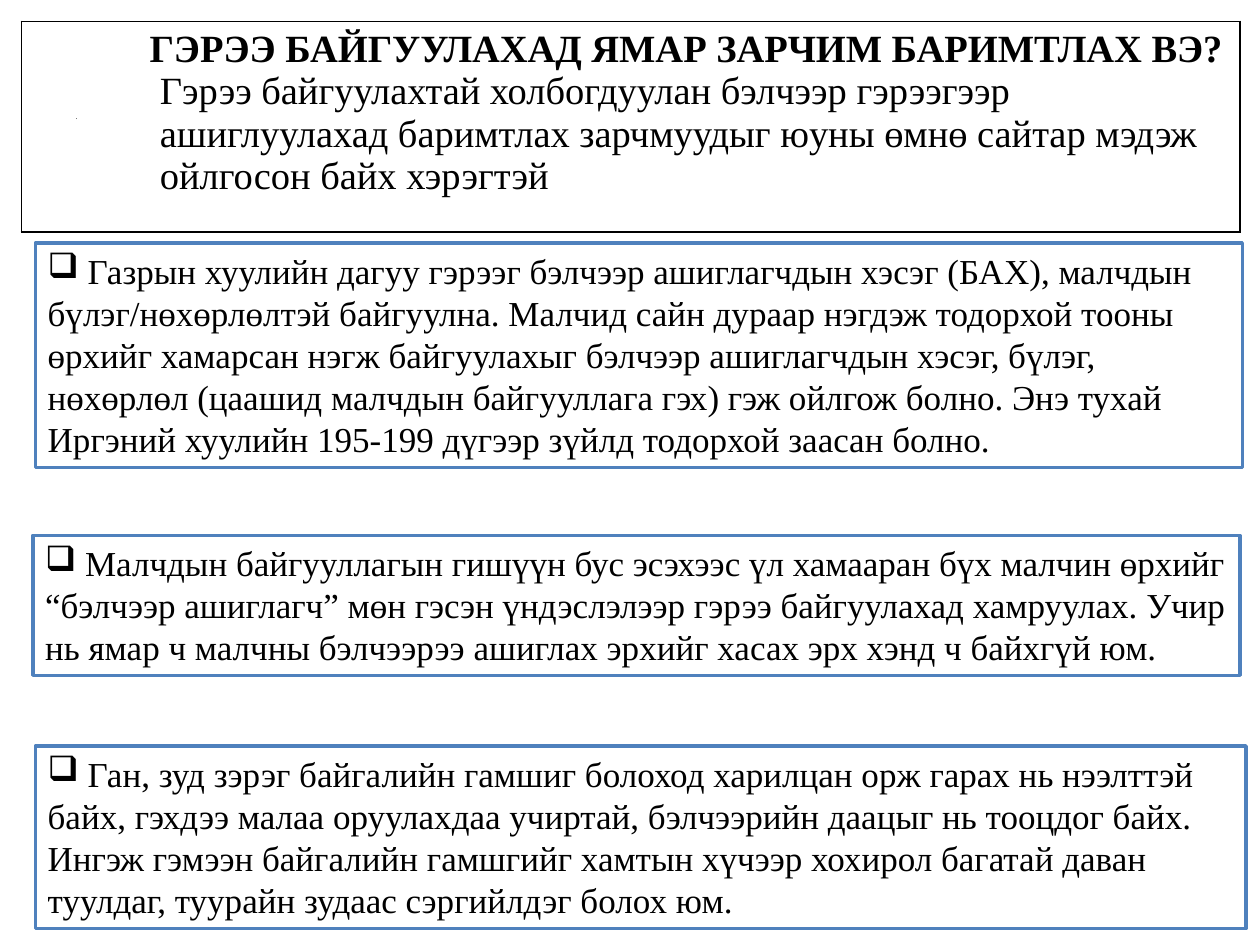
from lxml.etree import SubElement
from pptx import Presentation
from pptx.dml.color import RGBColor
from pptx.enum.shapes import MSO_SHAPE
from pptx.enum.text import MSO_ANCHOR, MSO_AUTO_SIZE, PP_ALIGN
from pptx.oxml import parse_xml
from pptx.oxml.ns import nsdecls, qn
from pptx.util import Inches, Pt

COLORS = {"text": "000000", "paper": "FFFFFF", "frame": "4F81BD"}
SERIF = "Times New Roman"


def style_run(run, size, font=SERIF, bold=False):
    run.font.size = Pt(size)
    run.font.name = font
    run.font.bold = bold
    run.font.color.rgb = RGBColor.from_string(COLORS["text"])


def set_borders(cell, visible_sides):
    for position, side in enumerate("LRTB"):
        fill = "<a:noFill/>"
        if side in visible_sides:
            fill = f'<a:solidFill><a:srgbClr val="{COLORS["text"]}"/></a:solidFill>'
        border = parse_xml(f'<a:ln{side} {nsdecls("a")} w="12700">{fill}</a:ln{side}>')
        cell._tc.get_or_add_tcPr().insert(position, border)


prs = Presentation()
prs.slide_width, prs.slide_height = Inches(10), Inches(7.5)
slide = prs.slides.add_slide(prs.slide_layouts[5])

# Title placeholder, reduced to a dot behind the heading
title = slide.shapes.title
title.left, title.top = Inches(0.5), Inches(0.3)
title.width, title.height = Inches(9), Inches(1.25)
title.text_frame.text = "."
title.text_frame.vertical_anchor = MSO_ANCHOR.MIDDLE
title.text_frame.paragraphs[0].alignment = PP_ALIGN.LEFT
style_run(title.text_frame.paragraphs[0].runs[0], 4, "Calibri")

# Heading table
heading = slide.shapes.add_table(
    1, 2, Inches(0.17), Inches(0.17), Inches(9.67), Inches(1.67)).table
heading.first_row = heading.horz_banding = False
for column, width in zip(heading.columns, (0.88, 8.79)):
    column.width = Inches(width)
for column_index, sides in enumerate(("LTB", "TRB")):
    cell = heading.cell(0, column_index)
    cell.fill.background()
    set_borders(cell, sides)

principles = heading.cell(0, 1)
principles.margin_left = principles.margin_right = Inches(0.07)
principles.margin_top = principles.margin_bottom = 0
principles.text_frame.text = "\n".join([
    "ГЭРЭЭ БАЙГУУЛАХАД ЯМАР ЗАРЧИМ БАРИМТЛАХ ВЭ?",
    "Гэрээ байгуулахтай холбогдуулан бэлчээр гэрээгээр",
    "ашиглуулахад баримтлах зарчмуудыг юуны өмнө сайтар мэдэж",
    "ойлгосон байх хэрэгтэй",
])
question, *explanation = principles.text_frame.paragraphs
question.alignment = PP_ALIGN.CENTER
question.line_spacing = 1.15
style_run(question.runs[0], 22, bold=True)
for line in explanation:
    line.alignment = PP_ALIGN.LEFT
    line._p.get_or_add_pPr().set("marL", str(Inches(0.15)))
    style_run(line.runs[0], 22)

# Framed rules: left, top, width, height, wording
rules = [
    (0.28, 1.93, 9.58, 1.78,
     "Газрын хуулийн дагуу гэрээг бэлчээр ашиглагчдын хэсэг (БАХ), малчдын "
     "бүлэг/нөхөрлөлтэй байгуулна. Малчид сайн дураар нэгдэж тодорхой тооны "
     "өрхийг хамарсан нэгж байгуулахыг бэлчээр ашиглагчдын хэсэг, бүлэг, "
     "нөхөрлөл (цаашид малчдын байгууллага гэх) гэж ойлгож болно. Энэ тухай "
     "Иргэний хуулийн 195-199 дүгээр зүйлд тодорхой заасан болно."),
    (0.26, 4.25, 9.58, 1.11,
     "Малчдын байгууллагын гишүүн бус эсэхээс үл хамааран бүх малчин өрхийг "
     "“бэлчээр ашиглагч” мөн гэсэн үндэслэлээр гэрээ байгуулахад хамруулах. Учир "
     "нь ямар ч малчны бэлчээрээ ашиглах эрхийг хасах эрх хэнд ч байхгүй юм."),
    (0.28, 5.92, 9.61, 1.45,
     "Ган, зуд зэрэг байгалийн гамшиг болоход харилцан орж гарах нь нээлттэй "
     "байх, гэхдээ малаа оруулахдаа учиртай, бэлчээрийн даацыг нь тооцдог байх. "
     "Ингэж гэмээн байгалийн гамшгийг хамтын хүчээр хохирол багатай даван "
     "туулдаг, туурайн зудаас сэргийлдэг болох юм."),
]
for left, top, width, height, wording in rules:
    rule = slide.shapes.add_shape(
        MSO_SHAPE.RECTANGLE, Inches(left), Inches(top), Inches(width), Inches(height))
    rule.shadow.inherit = False
    rule.fill.solid()
    rule.fill.fore_color.rgb = RGBColor.from_string(COLORS["paper"])
    rule.line.color.rgb = RGBColor.from_string(COLORS["frame"])
    rule.line.width = Pt(2)
    frame = rule.text_frame
    frame.word_wrap = True
    frame.auto_size = MSO_AUTO_SIZE.SHAPE_TO_FIT_TEXT
    frame.vertical_anchor = MSO_ANCHOR.TOP
    frame.text = " " + wording
    paragraph = frame.paragraphs[0]
    paragraph.alignment = PP_ALIGN.LEFT
    style_run(paragraph.runs[0], 20)
    bullet = SubElement(paragraph._p.get_or_add_pPr(), qn("a:buChar"))
    bullet.set("char", "❑")

prs.save("out.pptx")
